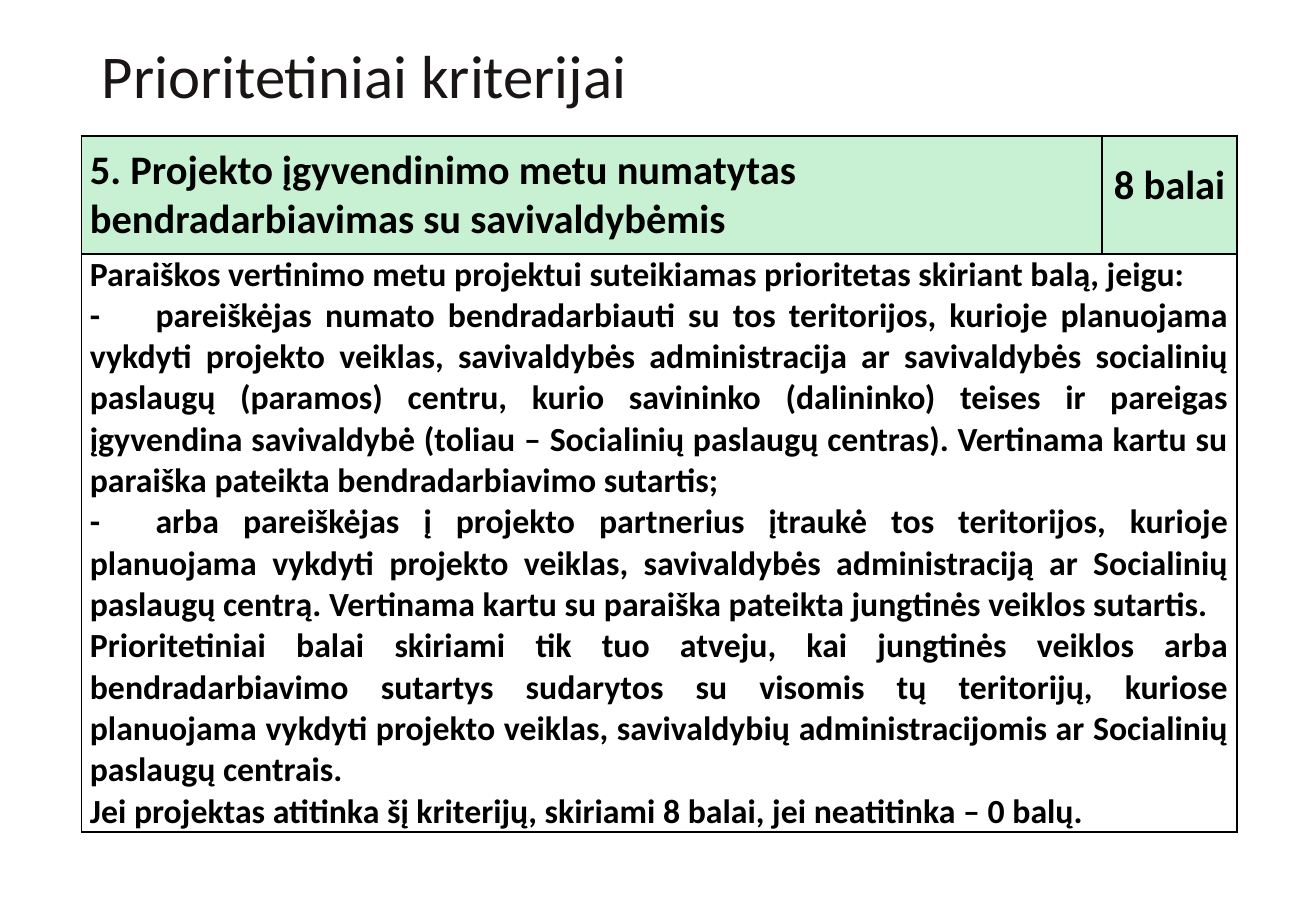
from lxml.etree import SubElement
from pptx import Presentation
from pptx.dml.color import RGBColor
from pptx.enum.text import MSO_ANCHOR, PP_ALIGN
from pptx.oxml.ns import qn
from pptx.util import Inches, Pt

FONT = "Calibri"
BLACK = RGBColor(0x00, 0x00, 0x00)
TITLE_INK = RGBColor(0x19, 0x15, 0x14)
MINT = RGBColor(0xC7, 0xF1, 0xD2)
WHITE = RGBColor(0xFF, 0xFF, 0xFF)

TITLE = "Prioritetiniai kriterijai"
CRITERION = "5. Projekto įgyvendinimo metu numatytas bendradarbiavimas su savivaldybėmis"
POINTS = "8 balai"
CONDITIONS = [
    "Paraiškos vertinimo metu projektui suteikiamas prioritetas skiriant balą, jeigu:",
    "-\tpareiškėjas numato bendradarbiauti su tos teritorijos, kurioje planuojama vykdyti "
    "projekto veiklas, savivaldybės administracija ar savivaldybės socialinių paslaugų "
    "(paramos) centru, kurio savininko (dalininko) teises ir pareigas įgyvendina savivaldybė "
    "(toliau – Socialinių paslaugų centras). Vertinama kartu su paraiška pateikta "
    "bendradarbiavimo sutartis;",
    "-\tarba pareiškėjas į projekto partnerius įtraukė tos teritorijos, kurioje planuojama "
    "vykdyti projekto veiklas, savivaldybės administraciją ar Socialinių paslaugų centrą. "
    "Vertinama kartu su paraiška pateikta jungtinės veiklos sutartis.",
    "Prioritetiniai balai skiriami tik tuo atveju, kai jungtinės veiklos arba "
    "bendradarbiavimo sutartys sudarytos su visomis tų teritorijų, kuriose planuojama "
    "vykdyti projekto veiklas, savivaldybių administracijomis ar Socialinių paslaugų centrais.",
    "Jei projektas atitinka šį kriterijų, skiriami 8 balai, jei neatitinka – 0 balų.",
]


def write_paragraph(paragraph, text, size, color, bold=False, align=PP_ALIGN.LEFT):
    """Fill a paragraph with text and format its runs."""
    paragraph.text = text
    paragraph.alignment = align
    for run in paragraph.runs:
        run.font.name = FONT
        run.font.size = Pt(size)
        run.font.bold = bold
        run.font.color.rgb = color


def add_tab_stop(paragraph, position):
    """Give a paragraph one left tab stop."""
    tabs = SubElement(paragraph._p.get_or_add_pPr(), qn("a:tabLst"))
    SubElement(tabs, qn("a:tab"), pos=str(position), algn="l")


def add_title(slide):
    """Write the slide title."""
    heading = slide.shapes.add_textbox(Inches(0.74), Inches(0.35), Inches(9.34), Inches(0.59))
    frame = heading.text_frame
    frame.word_wrap = True
    frame.vertical_anchor = MSO_ANCHOR.MIDDLE
    write_paragraph(frame.paragraphs[0], TITLE, 36, TITLE_INK)
    frame.paragraphs[0].line_spacing = 0.9


def style_cell(cell, fill, padding, anchor):
    """Set the borders, fill, margins and anchor of a cell."""
    properties = cell._tc.get_or_add_tcPr()
    for side in ("lnL", "lnR", "lnT", "lnB"):
        border = SubElement(properties, qn(f"a:{side}"), w=str(Pt(1)))
        paint = SubElement(border, qn("a:solidFill"))
        SubElement(paint, qn("a:srgbClr"), val=str(BLACK))
    cell.fill.solid()
    cell.fill.fore_color.rgb = fill
    cell.margin_left = cell.margin_right = Inches(0.07)
    cell.margin_top = cell.margin_bottom = Inches(padding)
    cell.vertical_anchor = anchor


def write_conditions(frame):
    """Write the justified conditions, with a tab after each dash."""
    for index, condition in enumerate(CONDITIONS):
        paragraph = frame.add_paragraph() if index else frame.paragraphs[0]
        write_paragraph(paragraph, condition, 20, BLACK, True, PP_ALIGN.JUSTIFY)
        if "\t" in condition:
            add_tab_stop(paragraph, Inches(0.54))


def add_criterion_table(slide):
    """Build the table with the criterion, its points and its conditions."""
    widths, heights = (8.4, 1.11), (0.97, 4.76)
    table = slide.shapes.add_table(
        2, 2, Inches(0.67), Inches(1.12), Inches(sum(widths)), Inches(sum(heights))
    ).table
    table.first_row = table.horz_banding = False
    for column, width in zip(table.columns, widths):
        column.width = Inches(width)
    for row, height in zip(table.rows, heights):
        row.height = Inches(height)

    criterion, points = table.cell(0, 0), table.cell(0, 1)
    conditions, covered = table.cell(1, 0), table.cell(1, 1)
    conditions.merge(covered)
    style_cell(criterion, MINT, 0.08, MSO_ANCHOR.MIDDLE)
    style_cell(points, MINT, 0.04, MSO_ANCHOR.MIDDLE)
    for cell in (conditions, covered):
        style_cell(cell, WHITE, 0, MSO_ANCHOR.TOP)

    write_paragraph(criterion.text_frame.paragraphs[0], CRITERION, 24, BLACK, True)
    score = points.text_frame.paragraphs[0]
    write_paragraph(score, POINTS, 24, BLACK, True, PP_ALIGN.CENTER)
    score.line_spacing = Pt(18)
    write_conditions(conditions.text_frame)


def main():
    """Build and save the presentation."""
    presentation = Presentation()
    presentation.slide_width = Inches(10.83)
    presentation.slide_height = Inches(7.5)
    slide = presentation.slides.add_slide(presentation.slide_layouts[6])
    add_title(slide)
    add_criterion_table(slide)
    presentation.save("out.pptx")


if __name__ == "__main__":
    main()
